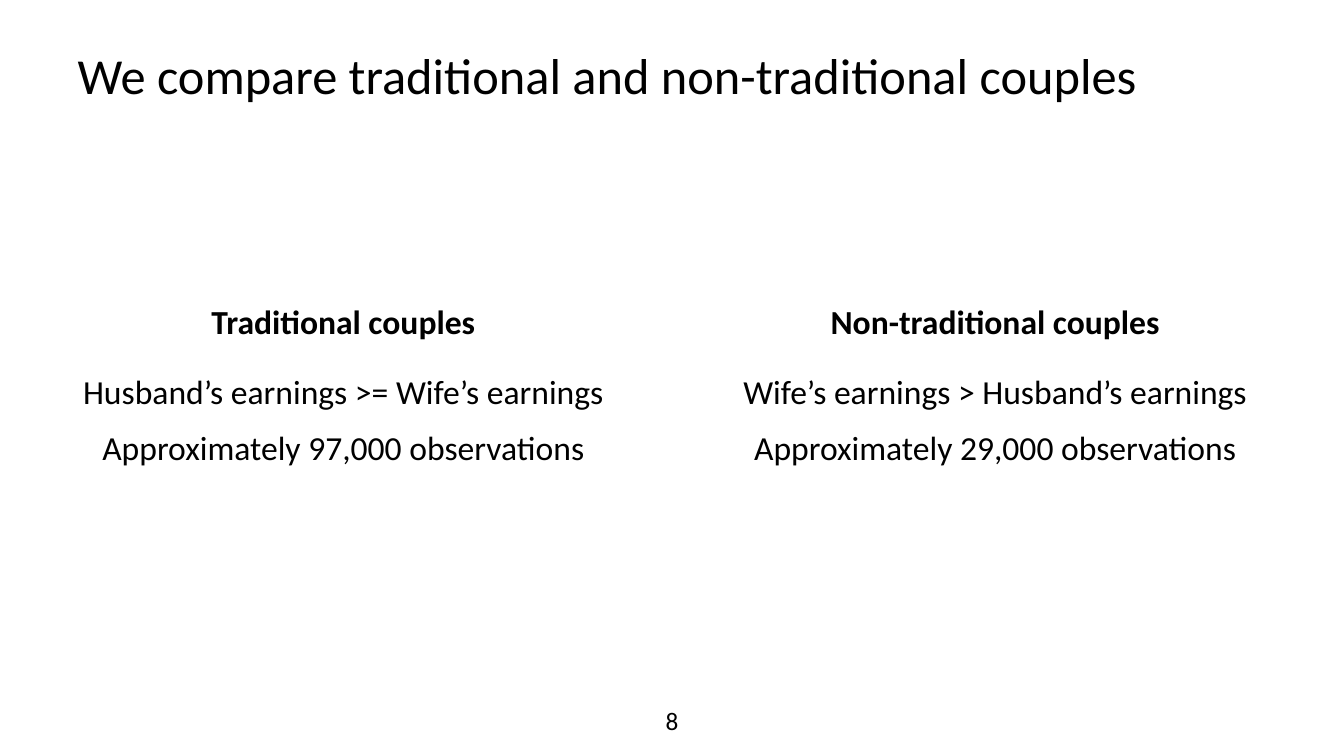
"""Build the slide that compares traditional and non-traditional couples."""
from dataclasses import dataclass

from pptx import Presentation
from pptx import util as u
from pptx.dml.color import RGBColor
from pptx.enum import text as t


@dataclass
class Group:
    col: int
    head: str
    rule: str
    count: str


GROUPS = [
    Group(0, "Traditional couples", "Husband’s earnings >= Wife’s earnings",
          "Approximately 97,000 observations"),
    Group(2, "Non-traditional couples", "Wife’s earnings > Husband’s earnings",
          "Approximately 29,000 observations"),
]
WIDTHS = [5.87, 0.53, 6]
HEIGHTS = [0.7, 0.55, 0.55]


def paint(font, color: str) -> None:
    font.color.rgb = RGBColor.from_string(color)


def write(frame, words: str, *, size: float = 24, bold: bool = False,
          align=t.PP_ALIGN.CENTER, color: str = "000000") -> None:
    frame.word_wrap = True
    para = frame.paragraphs[0]
    para.alignment = align
    run = para.add_run()
    run.text = words
    run.font.name = "Calibri"
    run.font.size = u.Pt(size)
    run.font.bold = bold
    paint(run.font, color)


def add_title(slide, words: str) -> None:
    title = slide.shapes.title
    title.left, title.top = u.Inches(0.67), u.Inches(0.3)
    title.width, title.height = u.Inches(12), u.Inches(0.87)
    title.text_frame.vertical_anchor = t.MSO_ANCHOR.MIDDLE
    write(title.text_frame, words, size=36, align=t.PP_ALIGN.LEFT)


def add_grid(slide, groups: list[Group]) -> None:
    frame = slide.shapes.add_table(
        len(HEIGHTS), len(WIDTHS), u.Inches(0.47), u.Inches(2.95),
        u.Inches(sum(WIDTHS)), u.Inches(sum(HEIGHTS)))
    table = frame.table
    table.first_row = table.horz_banding = False
    for col, width in zip(table.columns, WIDTHS):
        col.width = u.Inches(width)
    for row, height in zip(table.rows, HEIGHTS):
        row.height = u.Inches(height)
    for cell in table.iter_cells():
        cell.fill.background()
    for group in groups:
        for row, words in enumerate((group.head, group.rule, group.count)):
            write(table.cell(row, group.col).text_frame, words, bold=row == 0)


def add_page(slide, words: str) -> None:
    box = slide.shapes.add_textbox(
        u.Inches(5.11), u.Inches(6.95), u.Inches(3.11), u.Inches(0.4))
    write(box.text_frame, words, size=18)


def main() -> None:
    deck = Presentation()
    deck.slide_width, deck.slide_height = u.Inches(13.33), u.Inches(7.5)
    slide = deck.slides.add_slide(deck.slide_layouts[5])
    add_title(slide, "We compare traditional and non-traditional couples")
    add_grid(slide, GROUPS)
    add_page(slide, "8")
    deck.save("out.pptx")


if __name__ == "__main__":
    main()
